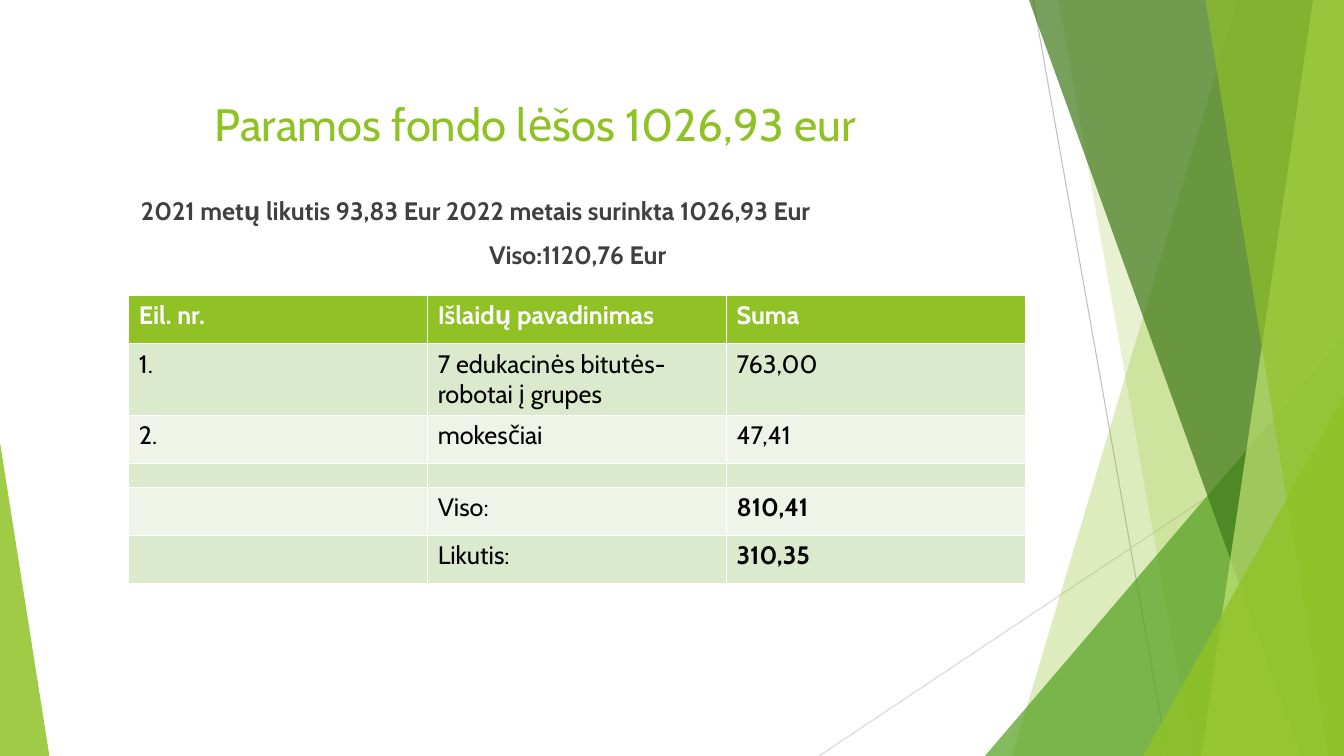
from dataclasses import dataclass

from pptx import Presentation
from pptx.dml.color import RGBColor
from pptx.enum.shapes import MSO_CONNECTOR, MSO_SHAPE
from pptx.enum.text import MSO_ANCHOR, PP_ALIGN
from pptx.oxml.ns import qn
from pptx.util import Pt
from lxml.etree import SubElement

WIDTH, HEIGHT = 960, 540


@dataclass(frozen=True)
class Theme:
    font: str = "Cabin"
    lime: str = "90C226"
    green: str = "54A021"
    forest: str = "3F7819"
    pale: str = "C0E474"
    band_dark: str = "DBE9CD"
    band_light: str = "EEF4E8"
    ink: str = "404040"
    black: str = "000000"
    white: str = "FFFFFF"
    rule_dark: str = "BFBFBF"
    rule_light: str = "D9D9D9"
    title_size: float = 32.4
    text_size: float = 18
    spacer_size: float = 8


class SlideBuilder:
    def __init__(self, slide, theme):
        self.shapes = slide.shapes
        self.theme = theme

    def rule(self, start, end, color):
        line = self.shapes.add_connector(MSO_CONNECTOR.STRAIGHT, *map(Pt, start + end))
        line.line.color.rgb = RGBColor.from_string(color)
        line.line.width = Pt(0.75)
        SubElement(line._element.spPr, qn("a:effectLst"))

    def paint(self, shape, color, opacity):
        """Fill with a translucent colour, without outline or shadow."""
        shape.shadow.inherit = False
        shape.line.fill.background()
        shape.fill.solid()
        shape.fill.fore_color.rgb = RGBColor.from_string(color)
        srgb = shape._element.spPr.find(qn("a:solidFill")).find(qn("a:srgbClr"))
        SubElement(srgb, qn("a:alpha")).set("val", str(opacity * 1000))

    def facet(self, top_x, bottom_x, color, opacity, top_right=WIDTH):
        """Full-height panel from a slanted left edge to the right slide edge."""
        corners = [(top_right, 0), (WIDTH, HEIGHT), (bottom_x, HEIGHT)]
        if top_right == WIDTH:
            corners.insert(0, (top_x, 0))
        else:
            corners = [(top_x, 0), (WIDTH, 0)] + corners[1:]
        outline = self.shapes.build_freeform(Pt(top_x), 0)
        outline.add_line_segments([(Pt(x), Pt(y)) for x, y in corners[1:]])
        self.paint(outline.convert_to_shape(), color, opacity)

    def corner(self, left, top, width, apex, color, opacity):
        """Right triangle standing on the bottom edge; apex 0 is left, 1 is right."""
        triangle = self.shapes.add_shape(
            MSO_SHAPE.ISOSCELES_TRIANGLE, Pt(left), Pt(top), Pt(width), Pt(HEIGHT - top))
        triangle.adjustments[0] = apex
        self.paint(triangle, color, opacity)

    def style(self, paragraph, size, color, bold=False):
        for run in paragraph.runs:
            run.font.name = self.theme.font
            run.font.size = Pt(size)
            run.font.bold = bold
            run.font.color.rgb = RGBColor.from_string(color)

    def text(self, content, box, size, color, bold=False, anchor=MSO_ANCHOR.TOP):
        frame = self.shapes.add_textbox(*map(Pt, box)).text_frame
        frame.word_wrap = True
        frame.vertical_anchor = anchor
        frame.text = content
        for paragraph in frame.paragraphs:
            paragraph.alignment = PP_ALIGN.CENTER
            self.style(paragraph, size, color, bold)
        return frame.paragraphs

    def table(self, rows, heights, left, top, width):
        theme = self.theme
        table = self.shapes.add_table(
            len(rows), len(rows[0]), Pt(left), Pt(top), Pt(width), Pt(sum(heights))).table
        for column in table.columns:
            column.width = Pt(width / len(rows[0]))
        for index, (entries, height) in enumerate(zip(rows, heights)):
            table.rows[index].height = Pt(height)
            header = index == 0
            band = theme.band_dark if index % 2 else theme.band_light
            for column, entry in enumerate(entries):
                cell = table.cell(index, column)
                cell.fill.solid()
                cell.fill.fore_color.rgb = RGBColor.from_string(theme.lime if header else band)
                cell.text = entry
                paragraph = cell.text_frame.paragraphs[0]
                is_total = column == 2 and not entries[0]
                self.style(paragraph, theme.text_size,
                           theme.white if header else theme.black, header or is_total)
                if not any(entries):
                    cell.margin_top = cell.margin_bottom = 0
                    end_mark = paragraph._p.get_or_add_endParaRPr()
                    end_mark.set("sz", str(int(theme.spacer_size * 100)))


def main():
    deck = Presentation()
    deck.slide_width, deck.slide_height = Pt(WIDTH), Pt(HEIGHT)
    theme = Theme()
    page = SlideBuilder(deck.slides.add_slide(deck.slide_layouts[6]), theme)

    page.rule((738, 0), (834, HEIGHT), theme.rule_dark)
    page.rule((WIDTH, 290), (585, HEIGHT), theme.rule_light)
    page.facet(884, 723, theme.lime, 30)
    page.facet(756, 852, theme.lime, 20)
    page.corner(703.5, 240, 256.5, 1, theme.green, 72)
    page.facet(735, 929.5, theme.forest, 70)
    page.facet(938, 858, theme.pale, 70)
    page.facet(861, 949, theme.lime, 65)
    page.corner(816.5, 283, 143.5, 1, theme.lime, 80)
    page.corner(0, 316, 35.3, 0, theme.lime, 85)

    page.text("Paramos fondo lėšos 1026,93 eur", (45.4, 65, 674, 47),
              theme.title_size, theme.lime, anchor=MSO_ANCHOR.MIDDLE)
    balance, total = page.text(
        "2021 metų likutis 93,83 Eur 2022 metais surinkta 1026,93 Eur\nViso:1120,76 Eur",
        (57.6, 136, 710, 346), theme.text_size, theme.ink, bold=True)
    balance.alignment = PP_ALIGN.LEFT
    balance._p.get_or_add_pPr().set("marL", str(Pt(36)))
    total.space_before = Pt(10)

    expenses = [
        ("Eil. nr.", "Išlaidų pavadinimas", "Suma"),
        ("1.", "7 edukacinės bitutės-robotai į grupes", "763,00"),
        ("2.", "mokesčiai", "47,41"),
        ("", "", ""),
        ("", "Viso:", "810,41"),
        ("", "Likutis:", "310,35"),
    ]
    page.table(expenses, [34.5, 51, 34.5, 17, 34.5, 34.5], left=92, top=211, width=640.5)
    deck.save("out.pptx")


if __name__ == "__main__":
    main()
